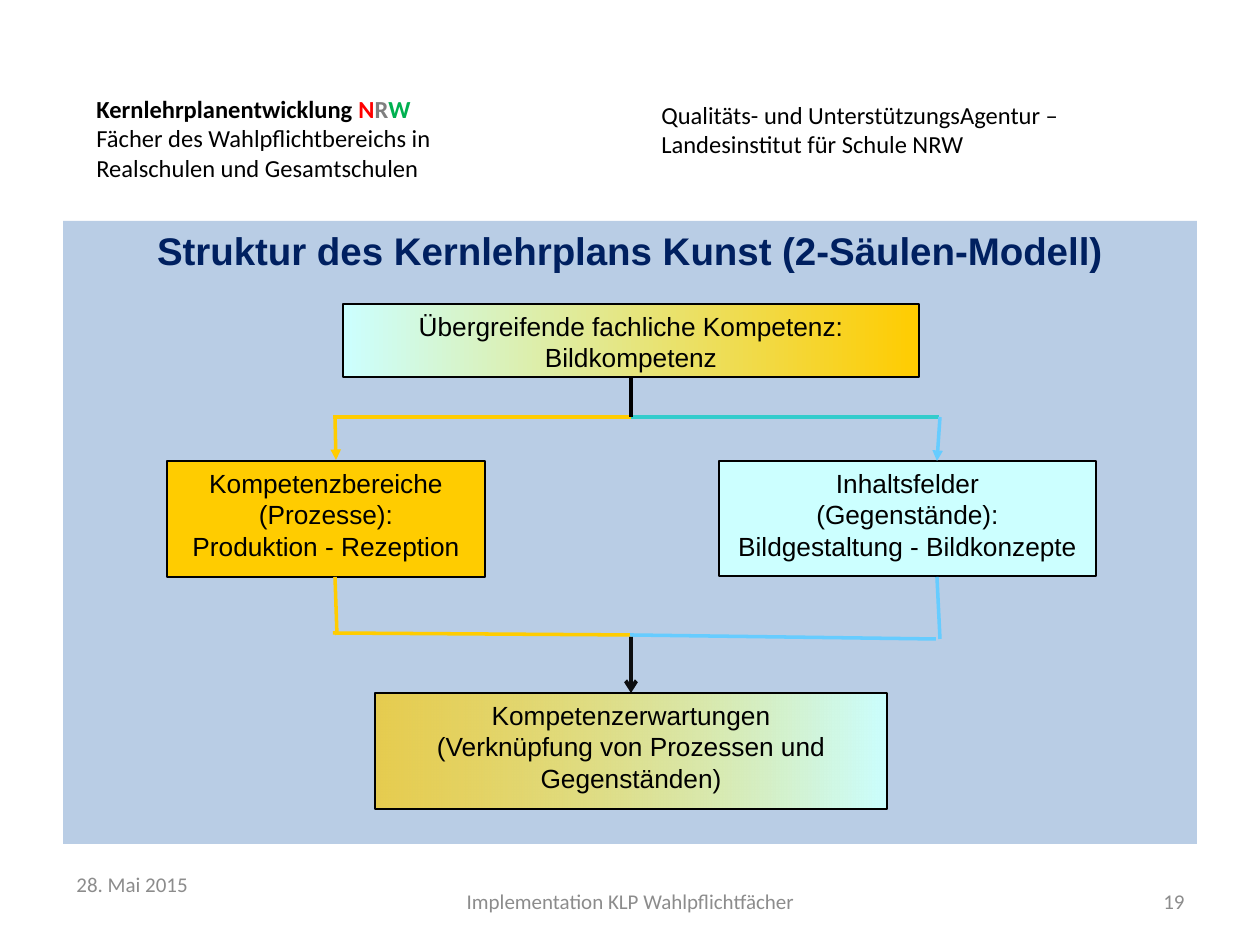
"""Build the slide on the two-pillar structure of the art curriculum."""
from typing import NamedTuple, Optional

import pptx
import pptx.dml.color
import pptx.enum.shapes
import pptx.enum.text
import pptx.oxml.ns
import pptx.util
from lxml import etree

ALIGN = pptx.enum.text.PP_ALIGN
ANCHOR = pptx.enum.text.MSO_ANCHOR
GOLD, AQUA, SKY, TEAL, BLACK = "FFCC00", "CCFFFF", "66CCFF", "33CCCC", "000000"
PANEL, NAVY, GREY = "B9CDE5", "002060", "8C8C8C"
BOTTOM, TOP = 2, 0


class Area(NamedTuple):
    """A rectangle in px."""
    left: int
    top: int
    width: int
    height: int


class Run(NamedTuple):
    """A stretch of text with its own look."""
    text: str
    color: str = BLACK
    bold: bool = False


class Box(NamedTuple):
    """A framed concept with one colour or a gradient of two."""
    text: str
    area: Area
    colors: tuple[str, ...]
    first_alpha: int = 100


class Link(NamedTuple):
    """A straight line between two points in px."""
    start: tuple[int, int]
    end: tuple[int, int]
    color: str
    arrow: str = ""
    weight: float = 2
    alpha: int = 100


class Label(NamedTuple):
    """A free text of the header or footer."""
    paragraphs: list[list[Run]]
    area: Area
    size: int
    align: Optional[ALIGN] = ALIGN.LEFT


def px(length: int) -> int:
    """Turn px into EMU."""
    return round(length * 914400 / 126)


def rgb(color: str) -> pptx.dml.color.RGBColor:
    """Turn a hex string into a colour."""
    return pptx.dml.color.RGBColor.from_string(color)


def plain(text: str, color: str = BLACK, bold: bool = False) -> list[list[Run]]:
    """Make one single-run paragraph of each line."""
    return [[Run(line, color, bold)] for line in text.split("\n")]


def set_alpha(color_element, percent: int) -> None:
    """Make a colour partly transparent."""
    alpha = etree.SubElement(color_element, pptx.oxml.ns.qn("a:alpha"))
    alpha.set("val", str(percent * 1000))


def write(frame, paragraphs: list[list[Run]], *, size: int, font: str,
          align=ALIGN.CENTER, anchor=ANCHOR.TOP) -> None:
    """Fill a text frame with formatted paragraphs."""
    frame.word_wrap = True
    frame.auto_size = pptx.enum.text.MSO_AUTO_SIZE.NONE
    frame.vertical_anchor = anchor
    for index, runs in enumerate(paragraphs):
        paragraph = frame.add_paragraph() if index else frame.paragraphs[0]
        paragraph.alignment = align
        for part in runs:
            run = paragraph.add_run()
            run.text = part.text
            run.font.size = pptx.util.Pt(size)
            run.font.name = font
            run.font.bold = part.bold
            run.font.color.rgb = rgb(part.color)


def draw_box(slide, box: Box):
    """Draw a concept box."""
    shape = slide.shapes.add_shape(
        pptx.enum.shapes.MSO_SHAPE.RECTANGLE, *map(px, box.area))
    shape.shadow.inherit = False
    if len(box.colors) == 1:
        shape.fill.solid()
        shape.fill.fore_color.rgb = rgb(box.colors[0])
    else:
        shape.fill.gradient()
        shape.fill.gradient_angle = 0
        for stop, color in zip(shape.fill.gradient_stops, box.colors):
            stop.color.rgb = rgb(color)
        if box.first_alpha < 100:
            set_alpha(shape._element.xpath(".//a:gs/a:srgbClr")[0], box.first_alpha)
    shape.line.color.rgb = rgb(BLACK)
    shape.line.width = pptx.util.Pt(0.75)
    write(shape.text_frame, plain(box.text), size=15, font="Arial")
    return shape


def draw_link(slide, link: Link):
    """Draw a line, with an arrowhead if it has one."""
    line = slide.shapes.add_connector(
        pptx.enum.shapes.MSO_CONNECTOR.STRAIGHT,
        *map(px, link.start + link.end))
    line.line.color.rgb = rgb(link.color)
    line.line.width = pptx.util.Pt(link.weight)
    properties = line._element.spPr
    if link.alpha < 100:
        set_alpha(properties.xpath(".//a:srgbClr")[0], link.alpha)
    if link.arrow:
        tail = etree.SubElement(line.line._get_or_add_ln(),
                                pptx.oxml.ns.qn("a:tailEnd"))
        tail.set("type", link.arrow)
    etree.SubElement(properties, pptx.oxml.ns.qn("a:effectLst"))
    return line


def draw_label(slide, label: Label) -> None:
    """Place a header or footer text."""
    textbox = slide.shapes.add_textbox(*map(px, label.area))
    write(textbox.text_frame, label.paragraphs, size=label.size,
          font="Calibri", align=label.align, anchor=ANCHOR.MIDDLE)


def draw_title(slide, text: str, area: Area) -> None:
    """Turn the title placeholder into the coloured panel."""
    title = slide.shapes.title
    title.left, title.top, title.width, title.height = map(px, area)
    title.fill.solid()
    title.fill.fore_color.rgb = rgb(PANEL)
    write(title.text_frame, plain(text, NAVY, True), size=22, font="Arial")


LABELS = [
    Label([[Run("Kernlehrplanentwicklung ", bold=True), Run("N", "FF0000", True),
            Run("R", "7F7F7F", True), Run("W", "00B050", True)],
           *plain("Fächer des Wahlpflichtbereichs in\nRealschulen und Gesamtschulen")],
          Area(84, 59, 427, 158), 14),
    Label(plain("Qualitäts- und UnterstützungsAgentur –\nLandesinstitut für Schule NRW"),
          Area(649, 50, 428, 158), 14),
    Label(plain("28. Mai 2015", GREY), Area(64, 859, 294, 50), 12),
    Label(plain("Implementation KLP Wahlpflichtfächer", GREY),
          Area(431, 876, 399, 50), 12, ALIGN.CENTER),
    Label(plain("19", GREY), Area(903, 876, 294, 50), 12, ALIGN.RIGHT),
]
OVERARCHING = Box("Übergreifende fachliche Kompetenz:\nBildkompetenz",
                  Area(343, 304, 576, 73), (AQUA, GOLD))
PROCESSES = Box("Kompetenzbereiche\n(Prozesse):\nProduktion - Rezeption",
                Area(167, 461, 318, 116), (GOLD,))
CONTENTS = Box("Inhaltsfelder\n(Gegenstände):\nBildgestaltung - Bildkonzepte",
               Area(719, 461, 377, 115), (AQUA,))
EXPECTATIONS = Box("Kompetenzerwartungen\n(Verknüpfung von Prozessen und Gegenständen)",
                   Area(375, 693, 512, 116), (GOLD, AQUA), 65)
BRANCHES = [
    Link((631, 417), (333, 417), GOLD),
    Link((631, 417), (939, 417), TEAL),
    Link((335, 417), (336, 460), GOLD, "triangle"),
    Link((940, 417), (937, 461), SKY, "triangle"),
    Link((335, 577), (337, 635), GOLD),
    Link((333, 633), (631, 635), GOLD),
    Link((937, 577), (940, 639), SKY),
    Link((936, 639), (630, 635), SKY),
]
STEM = Link((631, 377), (631, 417), BLACK)
RESULT = Link((631, 637), (631, 693), BLACK, "arrow", 2.25, 92)


def main() -> None:
    """Build and save the slide."""
    presentation = pptx.Presentation()
    presentation.slide_width, presentation.slide_height = px(1260), px(945)
    slide = presentation.slides.add_slide(presentation.slide_layouts[5])
    draw_title(slide, "Struktur des Kernlehrplans Kunst (2-Säulen-Modell)",
               Area(63, 221, 1134, 623))
    for label in LABELS:
        draw_label(slide, label)
    overarching, _, _, expectations = [
        draw_box(slide, box)
        for box in (OVERARCHING, PROCESSES, CONTENTS, EXPECTATIONS)]
    for branch in BRANCHES:
        draw_link(slide, branch)
    draw_link(slide, STEM).begin_connect(overarching, BOTTOM)
    draw_link(slide, RESULT).end_connect(expectations, TOP)
    presentation.save("out.pptx")


if __name__ == "__main__":
    main()
